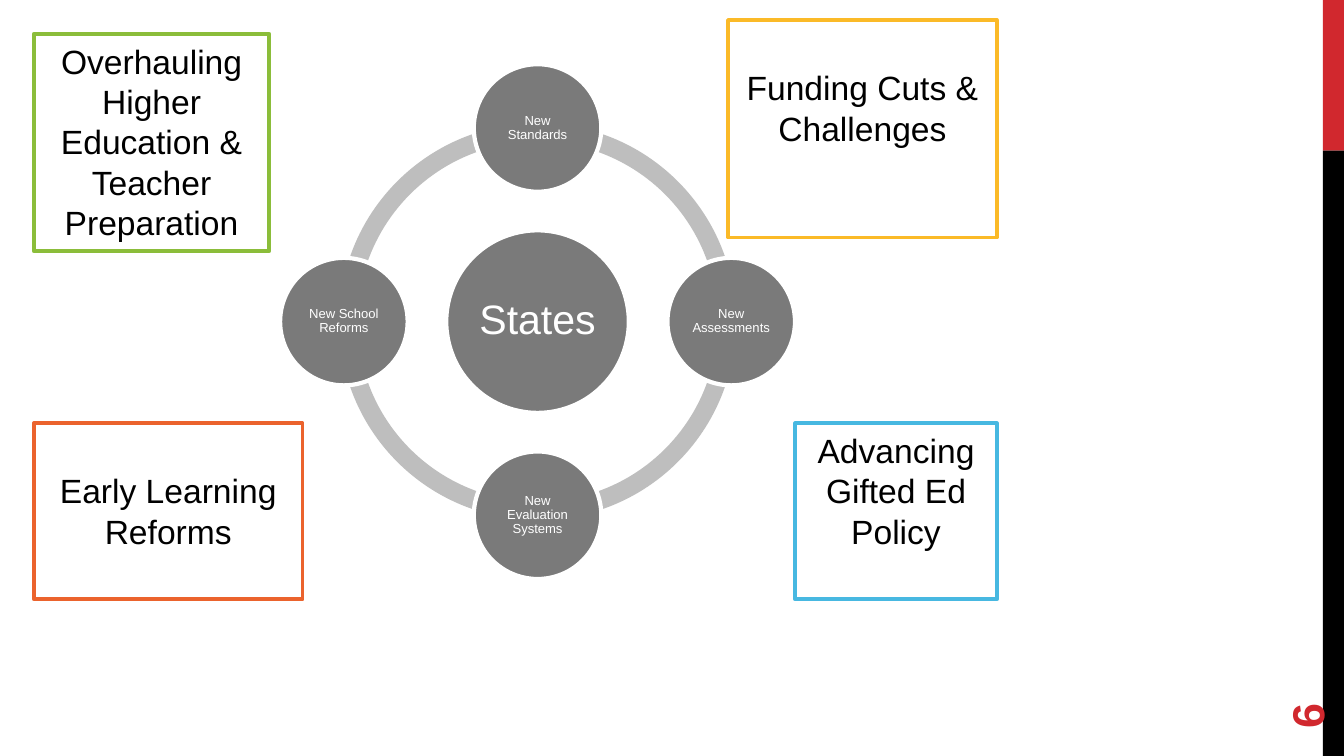
from math import cos, radians, sin

from pptx import Presentation
from pptx.dml.color import RGBColor
from pptx.enum.shapes import MSO_SHAPE as SHAPE
from pptx.enum.text import MSO_ANCHOR as ANCHOR, PP_ALIGN as ALIGN
from pptx.util import Cm, Pt


def rgb(value):
    return RGBColor.from_string(value)


class Deck:
    font, grey, ring, white = "Arial", "7A7A7A", "BEBEBE", "FFFFFF"
    red, black = "D1282E", "000000"

    def __init__(self, slide):
        self.s = slide

    def shape(self, kind, box, fill, line=None, width=2):
        sp = self.s.shapes.add_shape(kind, *map(Cm, box))
        sp.shadow.inherit = False
        sp.fill.solid()
        sp.fill.fore_color.rgb = rgb(fill)
        if line:
            sp.line.color.rgb = rgb(line)
            sp.line.width = Pt(width)
        else:
            sp.line.fill.background()
        return sp

    def label(self, sp, text, size, color, align=ALIGN.CENTER, bold=False,
              spacing=None, **frame):
        tf = sp.text_frame
        for name, value in {"word_wrap": True, **frame}.items():
            setattr(tf, name, value)
        p = tf.paragraphs[0]
        p.alignment = align
        p.line_spacing = spacing
        r = p.add_run()
        r.text = text
        for name, value in {"name": self.font, "size": Pt(size), "bold": bold}.items():
            setattr(r.font, name, value)
        r.font.color.rgb = rgb(color)

    def arc(self, cx, cy, d, start, end):
        sp = self.shape(SHAPE.BLOCK_ARC, (cx - d / 2, cy - d / 2, d, d), self.ring)
        # Angles are stored in 60000ths of a degree, adjustments in 100000ths
        for i, value in enumerate((start * 0.6, end * 0.6, 0.046)):
            sp.adjustments[i] = value

    def circle(self, cx, cy, d, text, size, inset):
        sp = self.shape(SHAPE.OVAL, (cx - d / 2, cy - d / 2, d, d),
                        self.grey, self.white, 2.25)
        margins = {f"margin_{side}": Cm(inset)
                   for side in ("left", "top", "right", "bottom")}
        self.label(sp, text, size, self.white, spacing=0.9,
                   vertical_anchor=ANCHOR.MIDDLE, **margins)

    def box(self, box, text, line, top):
        sp = self.shape(SHAPE.RECTANGLE, box, self.white, line)
        self.label(sp, text, 18, self.black, vertical_anchor=ANCHOR.TOP,
                   margin_top=Cm(top))

    def page_number(self, box, text):
        sp = self.s.shapes.add_textbox(*map(Cm, box))
        sp.rotation = 270
        self.label(sp, text, 24, self.red, ALIGN.LEFT, True,
                   vertical_anchor=ANCHOR.MIDDLE)


def main():
    prs = Presentation()
    prs.slide_width, prs.slide_height = Cm(25.4), Cm(14.29)
    deck = Deck(prs.slides.add_slide(prs.slide_layouts[6]))

    # Side bar
    deck.shape(SHAPE.RECTANGLE, (25, 0, 0.4, 2.85), deck.red)
    deck.shape(SHAPE.RECTANGLE, (25, 2.85, 0.4, 11.44), deck.black)

    # Ring, hub and the nodes around it, clockwise from the top
    cx, cy, orbit = 10.16, 6.08, 3.66
    for start in (180, 90, 0, 270):
        deck.arc(cx, cy, 7.5, start, (start + 90) % 360)
    deck.circle(cx, cy, 3.45, "States", 22, 0.08)
    nodes = ("New Standards", "New Assessments",
             "New Evaluation Systems", "New School Reforms")
    for i, text in enumerate(nodes):
        angle = radians(90 * i - 90)
        deck.circle(cx + orbit * cos(angle), cy + orbit * sin(angle),
                    2.41, text, 7, 0.03)

    # Corner boxes; the larger top margin lowers the text by one line
    high, low = 0.13, 0.89
    for box, text, line, top in (
        ((0.64, 0.64, 4.45, 4.11), "Overhauling Higher Education & Teacher Preparation",
         "8BBD3A", high),
        ((0.64, 8, 5.08, 3.33), "Early Learning Reforms", "EB632D", low),
        ((13.76, 0.38, 5.08, 4.11), "Funding Cuts & Challenges", "FBBA28", low),
        ((15.03, 8, 3.81, 3.33), "Advancing Gifted Ed Policy", "47B8E1", high),
    ):
        deck.box(box, text, line, top)

    deck.page_number((23.32, 12.14, 2.74, 1.02), "6")
    prs.save("out.pptx")


if __name__ == "__main__":
    main()
